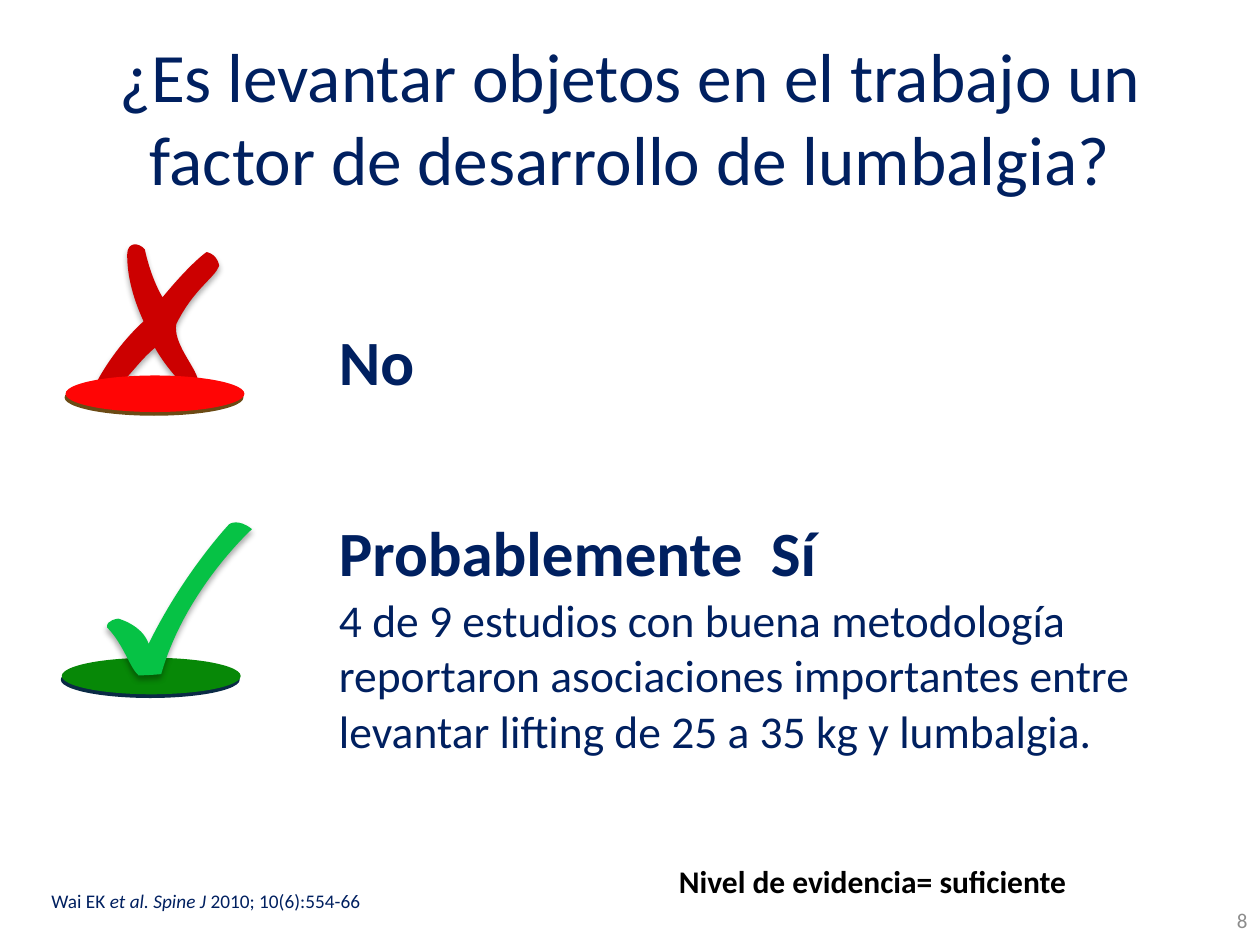
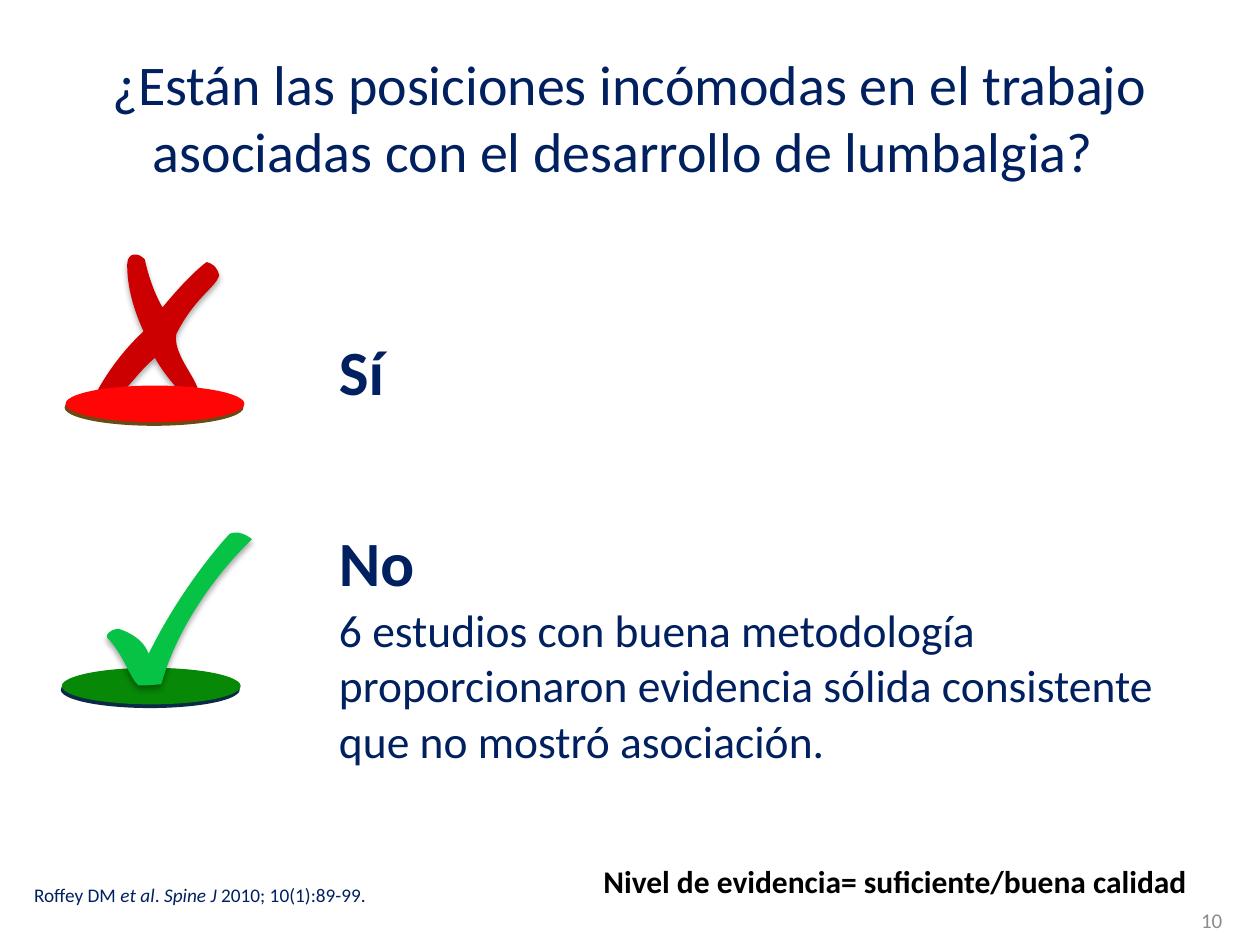
import pptx
import pptx.util
import pptx.dml.color
import pptx.enum.shapes
import pptx.enum.text
import pptx.oxml
import pptx.oxml.ns

Inches = pptx.util.Inches
ALIGN = pptx.enum.text.PP_ALIGN
ANCHOR = pptx.enum.text.MSO_ANCHOR

FONT = "Calibri"
COLORS = {
    "navy": "002060", "black": "000000", "gray": "8C8C8C",
    "cross": "CC0000", "red": "FF0505", "red_rim": "6B4A14",
    "check": "06C245", "green": "078807", "green_rim": "0A2A45",
}

SLIDES = [
    {
        "title": "¿Es levantar objetos en el trabajo un factor de desarrollo de lumbalgia?",
        "title_size": 39.6,
        "drop": 0,
        "rejected": "No",
        "accepted": "Probablemente  Sí",
        "reason": "4 de 9 estudios con buena metodología reportaron asociaciones "
                  "importantes entre levantar lifting de 25 a 35 kg y lumbalgia.",
        "evidence": ("Nivel de evidencia= suficiente", 5.29, 3.3),
        "citation": [("Wai EK ", False), ("et al. Spine J", True),
                     (" 2010; 10(6):554-66", False)],
        "citation_at": (0.31, 7.01, 2.68, 0.29),
        "citation_inset": (0.1, 0.05),
        "number": ("8", 7.67),
    },
    {
        "title": "¿Están las posiciones incómodas en el trabajo asociadas "
                 "con el desarrollo de lumbalgia? ",
        "title_size": 32,
        "drop": 0.08,
        "rejected": "Sí",
        "accepted": "No",
        "reason": "6 estudios con buena metodología \vproporcionaron evidencia "
                  "sólida consistente que no mostró asociación.",
        "evidence": ("Nivel de evidencia= suficiente/buena calidad", 4.69, 4.87),
        "citation": [("Roffey DM ", False), ("et al", True), (". ", False),
                     ("Spine J", True), (" 2010; 10(1):89-99.", False)],
        "citation_at": (0.27, 7.01, 9.45, 0.19),
        "citation_inset": (0, 0),
        "number": ("10", 7.47),
    },
]

CROSS = [
    (0.78, 3.01),
    (0.78, 3.01), (0.91, 2.76), (1.14, 2.55), (1.02, 2.29), (1.01, 2.11), (1.01, 2.02),
    (1.01, 1.92), (1.1, 1.92), (1.15, 1.98), (1.15, 1.98), (1.19, 2.19), (1.29, 2.36),
    (1.52, 2.08), (1.64, 2), (1.64, 2), (1.73, 2.02), (1.74, 2.11), (1.74, 2.11),
    (1.7, 2.21), (1.54, 2.29), (1.4, 2.57), (1.37, 2.72), (1.55, 2.91), (1.57, 3.01),
    (1.53, 3.06), (1.55, 3.06), (1.49, 3.09), (1.49, 3.09), (1.33, 2.94), (1.23, 2.76),
    (1.1, 2.87), (1.07, 2.94), (0.87, 3.14), (0.87, 3.14), (0.76, 3.13), (0.78, 3.01),
]
CHECK = [
    (0.85, 4.98),
    (0.98, 5.11), (1.03, 5.3), (1.1, 5.36), (1.19, 5.36), (1.28, 5.35), (1.28, 5.35),
    (1.47, 4.68), (2, 4.2), (2, 4.2), (1.89, 4.11), (1.82, 4.16), (1.82, 4.16),
    (1.82, 4.16), (1.46, 4.54), (1.18, 5.11), (1.13, 4.96), (0.94, 4.91), (0.94, 4.91),
    (0.94, 4.91), (0.84, 4.92), (0.85, 4.98),
]
DISC_SIZE = (1.42, 0.29)
ROW_HEIGHTS = (2.33, 2.38)


def color(name):
    return pptx.dml.color.RGBColor.from_string(COLORS[name])


def style(span, size, tint, bold=False, italic=False):
    span.font.name = FONT
    span.font.size = pptx.util.Pt(size)
    span.font.color.rgb = color(tint)
    span.font.bold = bold
    span.font.italic = italic


def paint(shape, tint, shadow, blur, distance, angle, opacity):
    shape.fill.solid()
    shape.fill.fore_color.rgb = color(tint)
    shape.line.fill.background()
    shape.shadow.inherit = False
    effects = shape._element.spPr.find(pptx.oxml.ns.qn("a:effectLst"))
    effects.append(pptx.oxml.parse_xml(
        f'<a:outerShdw {pptx.oxml.ns.nsdecls("a")} blurRad="{pptx.util.Pt(blur)}" '
        f'dist="{pptx.util.Pt(distance)}" dir="{angle * 60000}" rotWithShape="0">'
        f'<a:srgbClr val="{COLORS[shadow]}"><a:alpha val="{opacity * 1000}"/>'
        '</a:srgbClr></a:outerShdw>'))


def add_text(page, place, spans, size, tint, bold=False, align=ALIGN.LEFT, wrap=False):
    box = page.shapes.add_textbox(*map(Inches, place))
    box.text_frame.word_wrap = wrap
    para = box.text_frame.paragraphs[0]
    para.alignment = align
    for text, italic in spans:
        span = para.add_run()
        span.text = text
        style(span, size, tint, bold, italic)
    return box.text_frame


def add_title(page, text, size):
    title = page.shapes.title
    title.left, title.top, title.width, title.height = map(Inches, (0.5, 0.3, 9, 1.25))
    frame = title.text_frame
    frame.text = text
    frame.auto_size = pptx.enum.text.MSO_AUTO_SIZE.NONE
    frame.vertical_anchor = ANCHOR.MIDDLE
    frame.paragraphs[0].alignment = ALIGN.CENTER
    style(frame.paragraphs[0].runs[0], size, "navy")


def bend_segments(shape):
    qn = pptx.oxml.ns.qn
    lines = list(shape._element.spPr.iter(qn("a:lnTo")))
    for first in range(0, len(lines), 3):
        curve = pptx.oxml.parse_xml(f'<a:cubicBezTo {pptx.oxml.ns.nsdecls("a")}/>')
        lines[first].addprevious(curve)
        for line in lines[first:first + 3]:
            curve.append(line.find(qn("a:pt")))
            line.getparent().remove(line)


def add_mark(page, points, tint, drop):
    outline = [(Inches(x), Inches(y + drop)) for x, y in points]
    builder = page.shapes.build_freeform(*outline[0])
    builder.add_line_segments(outline[1:], close=True)
    mark = builder.convert_to_shape()
    bend_segments(mark)
    paint(mark, tint, "black", blur=3.5, distance=2.2, angle=90, opacity=32)


def add_disc(page, left, top, tint):
    disc = page.shapes.add_shape(pptx.enum.shapes.MSO_SHAPE.OVAL,
                                 *map(Inches, (left, top, *DISC_SIZE)))
    paint(disc, tint, tint + "_rim", blur=0, distance=2.2, angle=105, opacity=100)


def add_answers(page, content):
    place = (2.59, 1.72 + content["drop"], 7.14, sum(ROW_HEIGHTS))
    table = page.shapes.add_table(2, 1, *map(Inches, place)).table
    table.first_row = table.horz_banding = False
    answers = ([content["rejected"]], [content["accepted"], content["reason"]])
    for row, height, lines, anchor in zip(table.rows, ROW_HEIGHTS, answers,
                                          (ANCHOR.MIDDLE, ANCHOR.TOP)):
        row.height = Inches(height)
        cell = row.cells[0]
        cell.fill.background()
        cell.vertical_anchor = anchor
        cell.text_frame.text = "\n".join(lines)
        for index, para in enumerate(cell.text_frame.paragraphs):
            for span in para.runs:
                style(span, 26 if index else 36, "navy", bold=index == 0)


def add_footer(page, content):
    text, left, width = content["evidence"]
    add_text(page, (left, 6.79, width, 0.4), [(text, False)], 18, "black", bold=True)
    frame = add_text(page, content["citation_at"], content["citation"], 11, "navy", wrap=True)
    side, edge = map(Inches, content["citation_inset"])
    frame.margin_left = frame.margin_right = side
    frame.margin_top = frame.margin_bottom = edge
    text, left = content["number"]
    frame = add_text(page, (left, 7.1, 2.33, 0.4), [(text, False)], 12, "gray",
                     align=ALIGN.RIGHT, wrap=True)
    frame.vertical_anchor = ANCHOR.MIDDLE


def build_slide(deck, content):
    page = deck.slides.add_slide(deck.slide_layouts[5])
    drop = content["drop"]
    add_title(page, content["title"], content["title_size"])
    add_mark(page, CROSS, "cross", drop)
    add_disc(page, 0.52, 2.98 + drop, "red")
    add_disc(page, 0.49, 5.22 + drop, "green")
    add_mark(page, CHECK, "check", drop)
    add_answers(page, content)
    add_footer(page, content)


def main():
    deck = pptx.Presentation()
    deck.slide_width, deck.slide_height = Inches(10), Inches(7.5)
    for content in SLIDES:
        build_slide(deck, content)
    deck.save("out.pptx")


if __name__ == "__main__":
    main()
